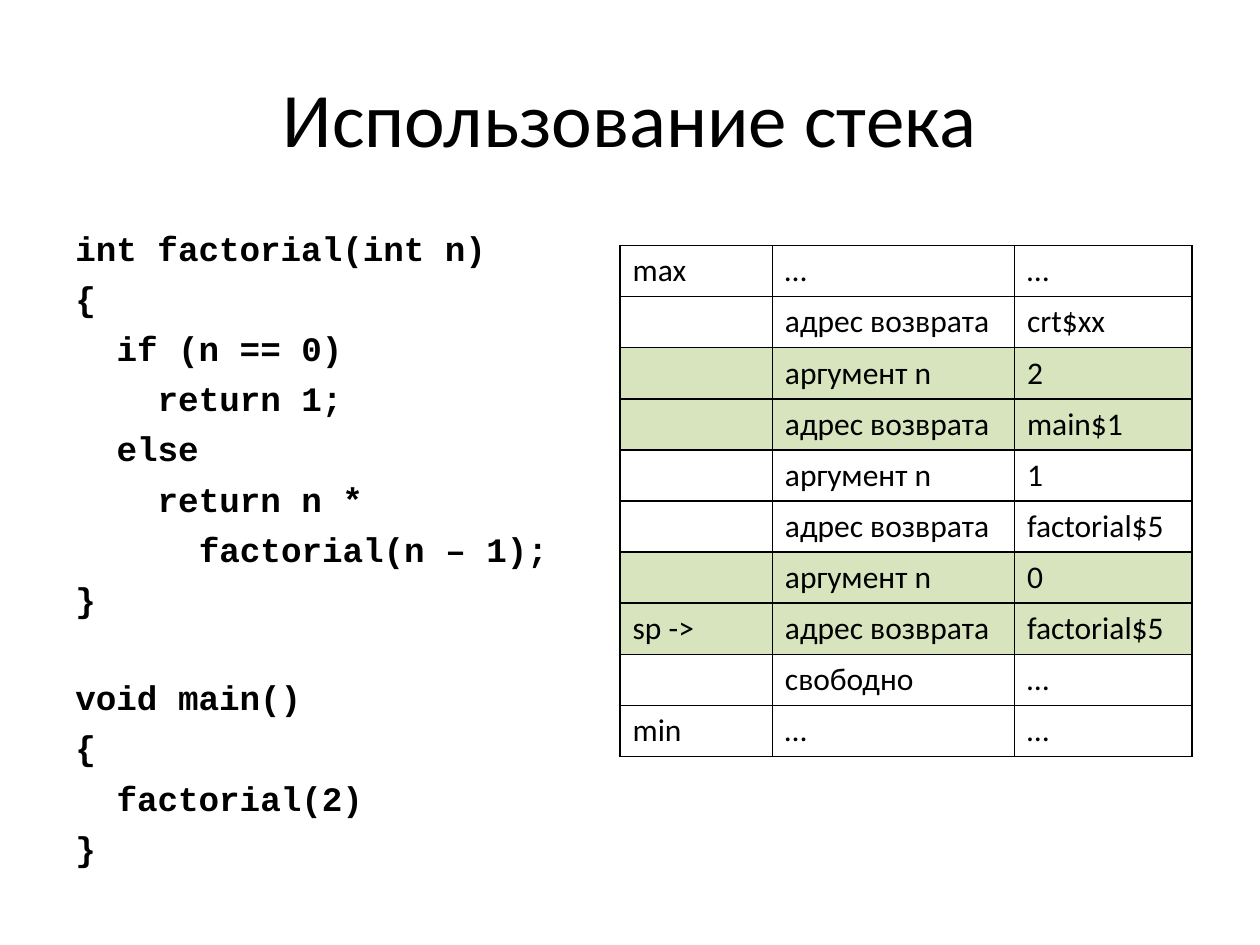
"""Build a slide showing the call stack of a recursive factorial."""
from dataclasses import dataclass

from lxml.etree import SubElement
from pptx import Presentation
from pptx.dml.color import RGBColor
from pptx.enum.text import MSO_ANCHOR, PP_ALIGN
from pptx.oxml.ns import qn
from pptx.util import Cm, Pt

BLACK = RGBColor(0x00, 0x00, 0x00)
FRAME_GREEN = RGBColor(0xD7, 0xE4, 0xBD)
BODY_FONT = "Calibri"
CODE_FONT = "Courier New"
CODE_SIZE = 19.6
CODE_INDENT = Cm(0.83)
CODE_SPACING = 5.2
BLANK_LINE = 27.4
COLUMN_WIDTHS = (Cm(3.07), Cm(4.88), Cm(3.58))
ROW_HEIGHT = Cm(1.03)


@dataclass(frozen=True)
class CodeLine:
    text: str
    level: int = 0
    starts_block: bool = False


@dataclass(frozen=True)
class StackRow:
    pointer: str
    meaning: str
    value: str
    shaded: bool = False


CODE = (
    CodeLine("int factorial(int n)"),
    CodeLine("{"),
    CodeLine("if (n == 0)", 1),
    CodeLine("return 1;", 2),
    CodeLine("else", 1),
    CodeLine("return n *", 2),
    CodeLine("factorial(n – 1);", 3),
    CodeLine("}"),
    CodeLine("void main()", starts_block=True),
    CodeLine("{"),
    CodeLine("factorial(2)", 1),
    CodeLine("}"),
)

STACK = (
    StackRow("max", "…", "…"),
    StackRow("", "адрес возврата", "crt$xx"),
    StackRow("", "аргумент n", "2", True),
    StackRow("", "адрес возврата", "main$1", True),
    StackRow("", "аргумент n", "1"),
    StackRow("", "адрес возврата", "factorial$5"),
    StackRow("", "аргумент n", "0", True),
    StackRow("sp ->", "адрес возврата", "factorial$5", True),
    StackRow("", "свободно", "…"),
    StackRow("min", "…", "…"),
)


def format_font(font, name: str, size: float, bold: bool = False) -> None:
    font.name = name
    font.size = Pt(size)
    font.bold = bold
    font.color.rgb = BLACK


def add_title(slide, text: str) -> None:
    shape = slide.shapes.add_textbox(Cm(1.27), Cm(0.76), Cm(22.86), Cm(3.18))
    text_frame = shape.text_frame
    text_frame.word_wrap = True
    text_frame.vertical_anchor = MSO_ANCHOR.MIDDLE
    text_frame.text = text
    paragraph = text_frame.paragraphs[0]
    paragraph.alignment = PP_ALIGN.CENTER
    format_font(paragraph.runs[0].font, BODY_FONT, 44)


def add_code(slide, lines: tuple[CodeLine, ...]) -> None:
    shape = slide.shapes.add_textbox(Cm(1.27), Cm(4.45), Cm(11.23), Cm(12.57))
    text_frame = shape.text_frame
    text_frame.word_wrap = True
    text_frame.text = "\n".join(line.text for line in lines)
    for line, paragraph in zip(lines, text_frame.paragraphs):
        paragraph.space_before = Pt(CODE_SPACING + BLANK_LINE * line.starts_block)
        properties = paragraph._p.get_or_add_pPr()
        properties.set("marL", str(CODE_INDENT * line.level))
        properties.set("indent", "0")
        format_font(paragraph.runs[0].font, CODE_FONT, CODE_SIZE, bold=True)


def add_borders(cell) -> None:
    properties = cell._tc.get_or_add_tcPr()
    for side in ("a:lnL", "a:lnR", "a:lnT", "a:lnB"):
        border = SubElement(properties, qn(side), w=str(Pt(1)))
        fill = SubElement(border, qn("a:solidFill"))
        SubElement(fill, qn("a:srgbClr"), val=str(BLACK))


def format_cell(cell, text: str, shaded: bool) -> None:
    cell.text = text
    paragraph = cell.text_frame.paragraphs[0]
    for run in paragraph.runs:
        format_font(run.font, BODY_FONT, 18)
    add_borders(cell)
    if shaded:
        cell.fill.solid()
        cell.fill.fore_color.rgb = FRAME_GREEN
    else:
        cell.fill.background()


def add_stack(slide, rows: tuple[StackRow, ...]) -> None:
    table = slide.shapes.add_table(
        len(rows), len(COLUMN_WIDTHS), Cm(12.5), Cm(4.95),
        sum(COLUMN_WIDTHS), ROW_HEIGHT * len(rows),
    ).table
    table.first_row = False
    table.horz_banding = False
    for column, width in zip(table.columns, COLUMN_WIDTHS):
        column.width = width
    for table_row, row in zip(table.rows, rows):
        table_row.height = ROW_HEIGHT
        for cell, text in zip(table_row.cells, (row.pointer, row.meaning, row.value)):
            format_cell(cell, text, row.shaded)


def main() -> None:
    presentation = Presentation()
    presentation.slide_width = Cm(25.4)
    presentation.slide_height = Cm(19.05)
    slide = presentation.slides.add_slide(presentation.slide_layouts[6])
    add_title(slide, "Использование стека")
    add_code(slide, CODE)
    add_stack(slide, STACK)
    presentation.save("out.pptx")


if __name__ == "__main__":
    main()
